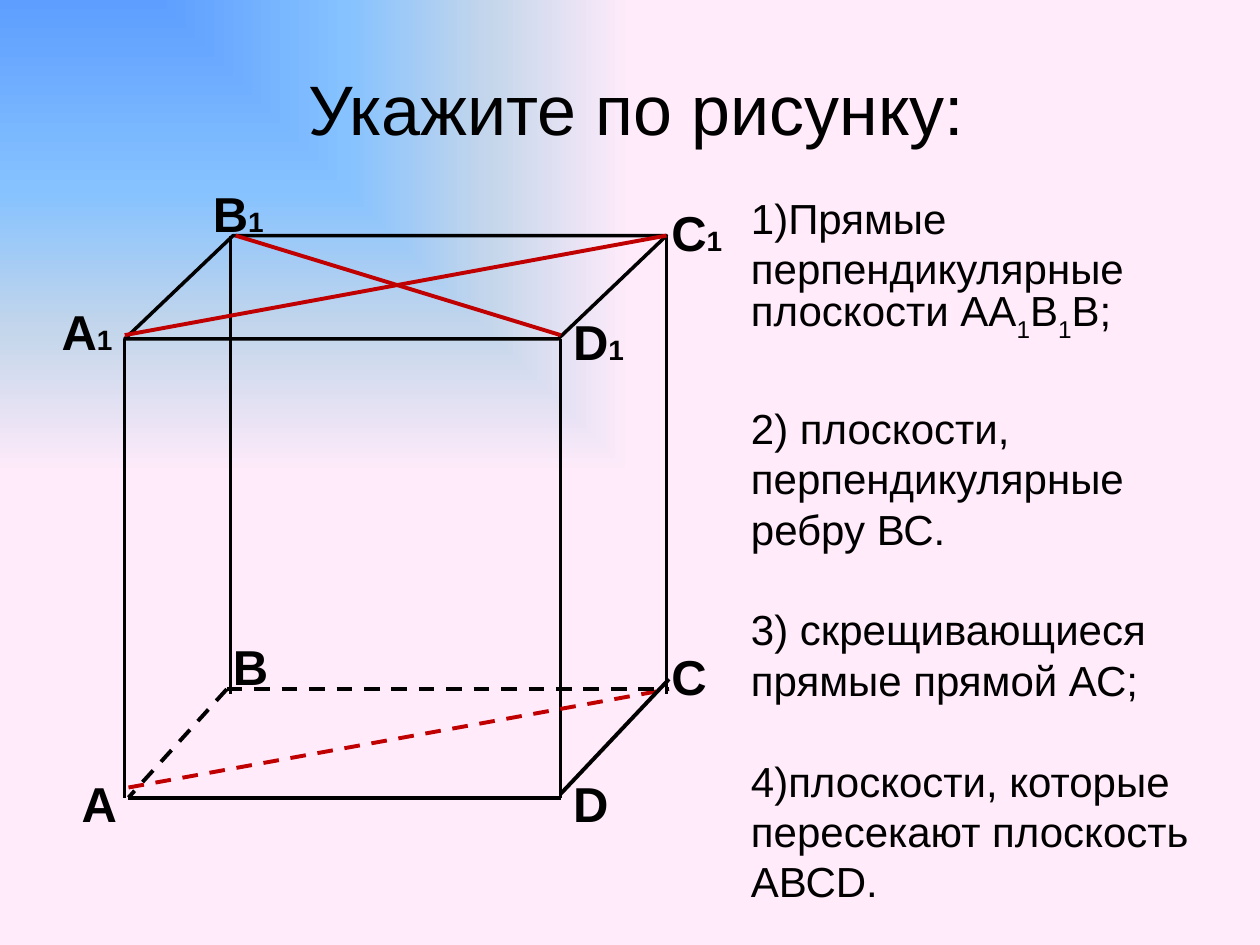
from dataclasses import dataclass

from lxml.etree import SubElement
from pptx import Presentation
from pptx.dml.color import RGBColor
from pptx.enum.dml import MSO_LINE
from pptx.enum.shapes import MSO_CONNECTOR, MSO_SHAPE
from pptx.enum.text import MSO_ANCHOR, PP_ALIGN
from pptx.oxml.ns import qn
from pptx.util import Inches, Pt


@dataclass(frozen=True)
class Theme:
    font: str = "Arial"
    ink: str = "000000"
    accent: str = "C00000"
    sky: tuple = ((0, "5E9EFF"), (40, "85C2FF"), (70, "C4D6EB"), (100, "FFEBFA"))
    title: float = 40
    body: float = 24
    leading: float = 28.8
    label: float = 28
    index: float = 16
    thin: float = 2
    thick: float = 2.25


THEME = Theme()


@dataclass(frozen=True)
class Box:
    """A region on a grid of 100 columns by 75 rows, each 0.1 inch."""
    col: float
    row: float
    cols: float
    rows: float

    def inner(self, col, row, cols=0, rows=0):
        return Box(self.col + col, self.row + row, cols, rows)

    def emu(self):
        return [Inches(n / 10) for n in (self.col, self.row, self.cols, self.rows)]


def place(shape, box):
    shape.left, shape.top, shape.width, shape.height = box.emu()


def add_run(paragraph, text, size, bold=False, baseline=None):
    run = paragraph.add_run()
    run.text = text
    run.font.name, run.font.size, run.font.bold = THEME.font, Pt(size), bold
    run.font.color.rgb = RGBColor.from_string(THEME.ink)
    if baseline:
        run.font._element.set("baseline", str(baseline * 1000))


def paint_background(slide):
    """Gradient spreading from the top left corner."""
    fill = slide.background.fill
    fill.gradient()
    gradient = slide.background._cSld.find(".//" + qn("a:gradFill"))
    for child in list(gradient):
        gradient.remove(child)
    stops = SubElement(gradient, qn("a:gsLst"))
    for position, color in THEME.sky:
        stop = SubElement(stops, qn("a:gs"), pos=str(position * 1000))
        SubElement(stop, qn("a:srgbClr"), val=color)
    path = SubElement(gradient, qn("a:path"), path="rect")
    SubElement(path, qn("a:fillToRect"), r="100000", b="100000")


def fill_title(title, box):
    place(title, box)
    title.text_frame.vertical_anchor = MSO_ANCHOR.MIDDLE
    paragraph = title.text_frame.paragraphs[0]
    paragraph.alignment = PP_ALIGN.CENTER
    add_run(paragraph, "Укажите по рисунку:", THEME.title)


def fill_tasks(body, box):
    """Four questions; each is (space before, runs of (text, baseline))."""
    tasks = [
        (0, [("1)Прямые перпендикулярные плоскости АА", None), ("1", -30),
             ("В", None), ("1", -30), ("В;", None)]),
        (33.5, [("2) плоскости, перпендикулярные ребру ВС.", None)]),
        (THEME.leading, [("3) скрещивающиеся прямые прямой АС;", None)]),
        (THEME.leading, [("4)плоскости, которые пересекают плоскость АВСD.", None)]),
    ]
    place(body, box)
    frame = body.text_frame
    frame.vertical_anchor = MSO_ANCHOR.MIDDLE
    for number, (gap, runs) in enumerate(tasks):
        paragraph = frame.add_paragraph() if number else frame.paragraphs[0]
        paragraph.alignment = PP_ALIGN.LEFT
        paragraph.line_spacing = Pt(THEME.leading)
        paragraph.space_before, paragraph.space_after = Pt(gap), Pt(0)
        properties = paragraph._p.get_or_add_pPr()
        properties.set("marL", "0")
        properties.set("indent", "0")
        SubElement(properties, qn("a:buNone"))
        for text, baseline in runs:
            add_run(paragraph, text, THEME.body, baseline=baseline)


def add_edge(slide, box, start, end, color, width, dashed=False):
    x1, y1 = box.inner(*start).emu()[:2]
    x2, y2 = box.inner(*end).emu()[:2]
    edge = slide.shapes.add_connector(MSO_CONNECTOR.STRAIGHT, x1, y1, x2, y2)
    edge.line.color.rgb = RGBColor.from_string(color)
    edge.line.width = Pt(width)
    if dashed:
        edge.line.dash_style = MSO_LINE.DASH
    SubElement(edge._element.spPr, qn("a:effectLst"))


def add_vertex(slide, box, letter, index, col, row):
    place_box = box.inner(col, row, 6.1 if index else 4.9, 5.7)
    frame = slide.shapes.add_textbox(*place_box.emu()).text_frame
    frame.word_wrap = True
    add_run(frame.paragraphs[0], letter, THEME.label, bold=True)
    if index:
        add_run(frame.paragraphs[0], index, THEME.index, bold=True)


def draw_prism(slide, box):
    depth, height = 8.2, 36.4
    front, back = box.rows, height
    left, right = 0, box.cols
    back_left, front_right = 8.4, 34.6

    # Upper face
    top = slide.shapes.add_shape(
        MSO_SHAPE.FLOWCHART_DATA, *box.inner(0, 0, box.cols, depth).emu())
    top.shadow.inherit = False
    top.fill.background()
    top.line.color.rgb = RGBColor.from_string(THEME.ink)
    top.line.width = Pt(THEME.thin)

    # Side edges
    for col, row in ((left, depth), (front_right, depth), (back_left, 0), (right, 0)):
        add_edge(slide, box, (col, row), (col, row + height), THEME.ink, THEME.thin)

    # Diagonals of both faces, then edges of the base
    base_b, base_c = (8.1, back - 0.4), (right + 0.2, back - 0.4)
    base_a = (0.3, front)
    for start, end, color, dashed in (
        ((left, 7.9), (right, 0), THEME.accent, False),
        ((0.3, 43.8), base_c, THEME.accent, True),
        ((8.8, 0), (front_right, 7.9), THEME.accent, False),
        (base_b, base_c, THEME.ink, True),
        (base_a, (front_right, front), THEME.ink, False),
        ((front_right, 44.3), (right + 0.2, 35.2), THEME.ink, False),
        (base_b, base_a, THEME.ink, True),
    ):
        add_edge(slide, box, start, end, color, THEME.thick, dashed)

    # Vertex names
    for letter, index, col, row in (
        ("В", "1", 6, -4.6), ("А", "1", -6, 4.7),
        ("D", "1", front_right, 5.5), ("С", "1", 42.4, -3.1),
        ("С", "", 42.4, 32.1), ("D", "", front_right, 42.2),
        ("В", "", 7.6, 31.3), ("А", "", -4.4, 42.2),
    ):
        add_vertex(slide, box, letter, index, col, row)


def main():
    deck = Presentation()
    deck.slide_width, deck.slide_height = Inches(10), Inches(7.5)
    slide = deck.slides.add_slide(deck.slide_layouts[1])
    paint_background(slide)
    fill_title(slide.shapes.title, Box(5.5, 2.3, 90, 12.5))
    fill_tasks(slide.placeholders[1], Box(58.6, 14.8, 38.3, 57.6))
    draw_prism(slide, Box(9.9, 18.7, 43, 44.6))
    deck.save("out.pptx")


if __name__ == "__main__":
    main()
